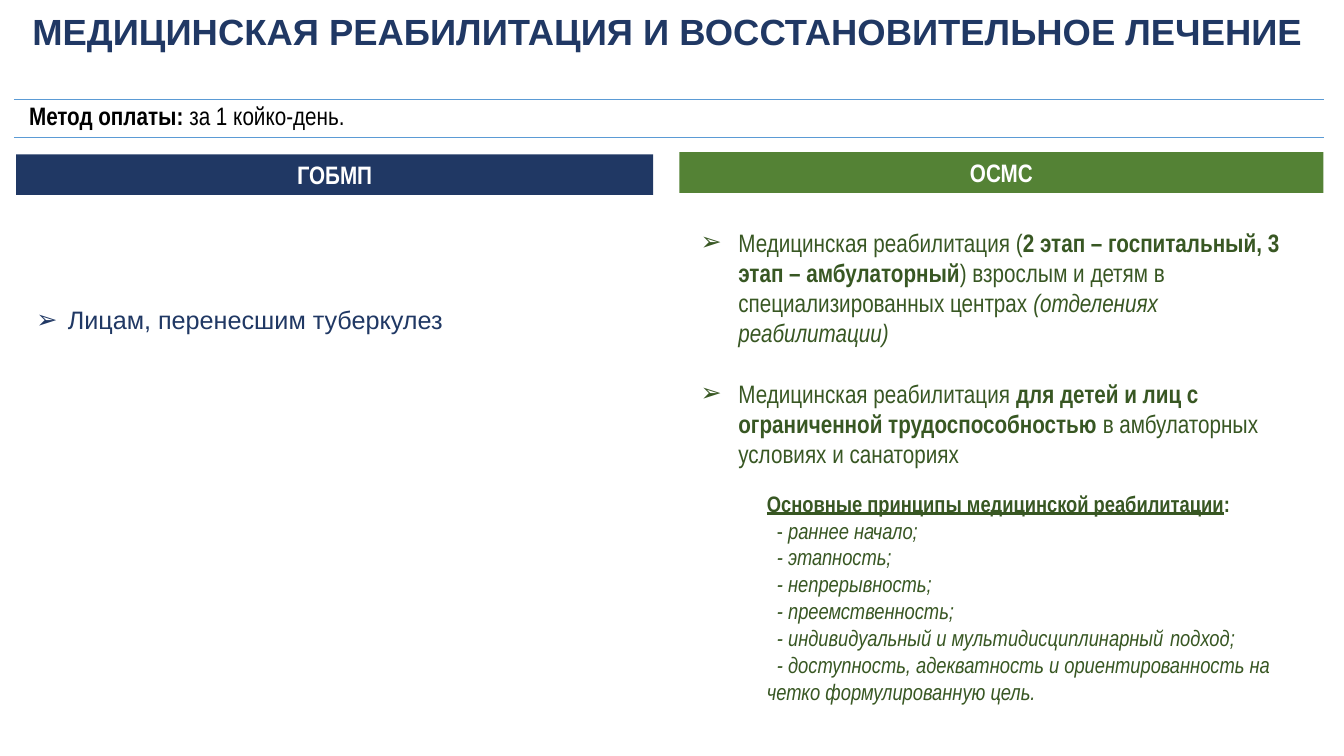
from lxml import etree
from pptx import Presentation
from pptx.dml.color import RGBColor
from pptx.enum.shapes import MSO_CONNECTOR, MSO_SHAPE
from pptx.enum.text import MSO_ANCHOR, MSO_AUTO_SIZE, PP_ALIGN
from pptx.oxml.ns import qn
from pptx.util import Pt

LINE = MSO_CONNECTOR.STRAIGHT
RECT = MSO_SHAPE.RECTANGLE
TOP, MIDDLE = MSO_ANCHOR.TOP, MSO_ANCHOR.MIDDLE
LEFT, CENTER = PP_ALIGN.LEFT, PP_ALIGN.CENTER
NO_FIT = MSO_AUTO_SIZE.NONE

NAVY = RGBColor(0x20, 0x38, 0x64)
GREEN = RGBColor(0x54, 0x82, 0x35)
DARK_GREEN = RGBColor(0x38, 0x57, 0x23)
BLUE = RGBColor(0x5B, 0x9B, 0xD5)
BLACK = RGBColor(0, 0, 0)
WHITE = RGBColor(0xFF, 0xFF, 0xFF)

WIDE, NARROW = "Arial", "Arial Narrow"
BOLD, ITALIC = {"bold": True}, {"italic": True}
BOLD_LINE = {"bold": True, "underline": True}

PRINCIPLES = [
    "этапность;",
    "непрерывность;",
    "преемственность;",
    "индивидуальный и мультидисциплинарный\tподход;",
    "доступность, адекватность и ориентированность на четко формулированную цель.",
]


def set_all(target, values):
    """Set each named value on the target."""
    for name, value in values.items():
        setattr(target, name, value)


def place(sp, left, top, width, height):
    """Move and size a shape, in points."""
    box = {"left": left, "top": top, "width": width, "height": height}
    set_all(sp, {name: Pt(value) for name, value in box.items()})


def add_bullet(p, indent):
    """Give a paragraph an arrow bullet with a hanging indent."""
    pPr = p._p.get_or_add_pPr()
    set_indent(p, indent, -indent)
    etree.SubElement(pPr, qn("a:buFont"), typeface=WIDE)
    etree.SubElement(pPr, qn("a:buChar"), char="➢")


def set_indent(p, margin, first):
    """Set the left margin and first-line indent."""
    pPr = p._p.get_or_add_pPr()
    pPr.set("marL", str(Pt(margin)))
    pPr.set("indent", str(Pt(first)))


def add_tab_stop(p, position):
    """Add a left tab stop to a paragraph."""
    tabs = etree.SubElement(p._p.get_or_add_pPr(), qn("a:tabLst"))
    etree.SubElement(tabs, qn("a:tab"), pos=str(Pt(position)), algn="l")


def fill_text(sp, paragraphs, font, anchor=TOP, **para):
    """Write paragraphs of (text, format) runs and return them."""
    tf = sp.text_frame
    set_all(tf, {"word_wrap": True, "auto_size": NO_FIT, "vertical_anchor": anchor})
    layout = {"alignment": LEFT, "line_spacing": 1.0, "space_before": Pt(0)} | para
    for i, runs in enumerate(paragraphs):
        p = tf.add_paragraph() if i else tf.paragraphs[0]
        set_all(p, layout)
        for text, extra in runs:
            r = p.add_run()
            r.text = text
            values = font | extra
            r.font.color.rgb = values.pop("rgb")
            set_all(r.font, values)
    return tf.paragraphs


def font_of(name, size, rgb):
    """Make the base format of a text."""
    return {"name": name, "size": Pt(size), "rgb": rgb}


def add_rule(s, y):
    """Draw a thin line across the slide."""
    line = s.shapes.add_connector(LINE, Pt(10), Pt(y), Pt(945.4), Pt(y))
    line.line.color.rgb = BLUE
    line.line.width = Pt(0.5)
    etree.SubElement(line._element.spPr, qn("a:effectLst"))


def add_header(s, text, rgb, left, top, width):
    """Draw a filled column header."""
    sp = s.shapes.add_shape(RECT, Pt(left), Pt(top), Pt(width), Pt(29))
    sp.shadow.inherit = False
    sp.fill.solid()
    sp.fill.fore_color.rgb = rgb
    sp.line.fill.background()
    fill_text(sp, [[(text, BOLD)]], font_of(NARROW, 18, WHITE), alignment=CENTER)


def add_text(s, box, paragraphs, font):
    """Add a wrapping text box and return its paragraphs."""
    sp = s.shapes.add_textbox(*map(Pt, box))
    return fill_text(sp, paragraphs, font)


def fill_bullets(sp, box, items, font, indent, gap=0, **layout):
    """Turn a body placeholder into an arrow list."""
    place(sp, *box)
    for i, p in enumerate(fill_text(sp, items, font, **layout)):
        p.space_before = Pt(gap if i else 0)
        add_bullet(p, indent)


def add_principles(s):
    """Add the list of rehabilitation principles."""
    heading = [("Основные принципы медицинской реабилитации", BOLD_LINE), (":", BOLD)]
    items = [[("- ", {}), ("раннее начало;", ITALIC)]]
    items += [[("- " + text, ITALIC)] for text in PRINCIPLES]
    paragraphs = add_text(s, (540.7, 346.3, 396, 162.7), [heading] + items,
                          font_of(NARROW, 16, DARK_GREEN))
    for p in paragraphs[1:]:
        set_indent(p, 0, 7.2)
        if "\t" in p.text:
            add_tab_stop(p, 301.4)


def main():
    """Build and save the slide."""
    prs = Presentation()
    prs.slide_width, prs.slide_height = Pt(960), Pt(540)
    s = prs.slides.add_slide(prs.slide_layouts[3])
    title, left_list, right_list = s.placeholders

    place(title, -2.9, 7.2, 960, 33.8)
    fill_text(title, [[("МЕДИЦИНСКАЯ РЕАБИЛИТАЦИЯ И ВОССТАНОВИТЕЛЬНОЕ ЛЕЧЕНИЕ", BOLD)]],
              font_of(WIDE, 26, NAVY), MIDDLE, alignment=CENTER, line_spacing=0.9)

    for y in (71.3, 98):
        add_rule(s, y)
    add_text(s, (13.7, 68.4, 935.3, 29),
             [[("Метод оплаты: ", BOLD), ("за 1 койко-день.", {})]],
             font_of(NARROW, 18, BLACK))

    add_header(s, "ГОБМП", NAVY, 11.5, 110.2, 455)
    add_header(s, "ОСМС", GREEN, 485.3, 108.7, 460)

    fill_bullets(left_list, (18.7, 168.5, 447.8, 122.4),
                 [[("Лицам, перенесшим туберкулез", {})]],
                 font_of(WIDE, 18, NAVY), 22.5, anchor=MIDDLE, line_spacing=0.9)
    fill_bullets(right_list, (493.2, 158.4, 429.1, 203.8), [
        [("Медицинская реабилитация (", {}),
         ("2 этап – госпитальный, 3 этап – амбулаторный", BOLD),
         (") взрослым и детям в специализированных центрах ", {}),
         ("(отделениях реабилитации)", ITALIC)],
        [("Медицинская реабилитация ", {}),
         ("для детей и лиц с ограниченной трудоспособностью ", BOLD),
         ("в амбулаторных условиях и санаториях", {})],
    ], font_of(NARROW, 18, DARK_GREEN), 27, gap=21.6)
    add_principles(s)
    prs.save("out.pptx")


if __name__ == "__main__":
    main()
